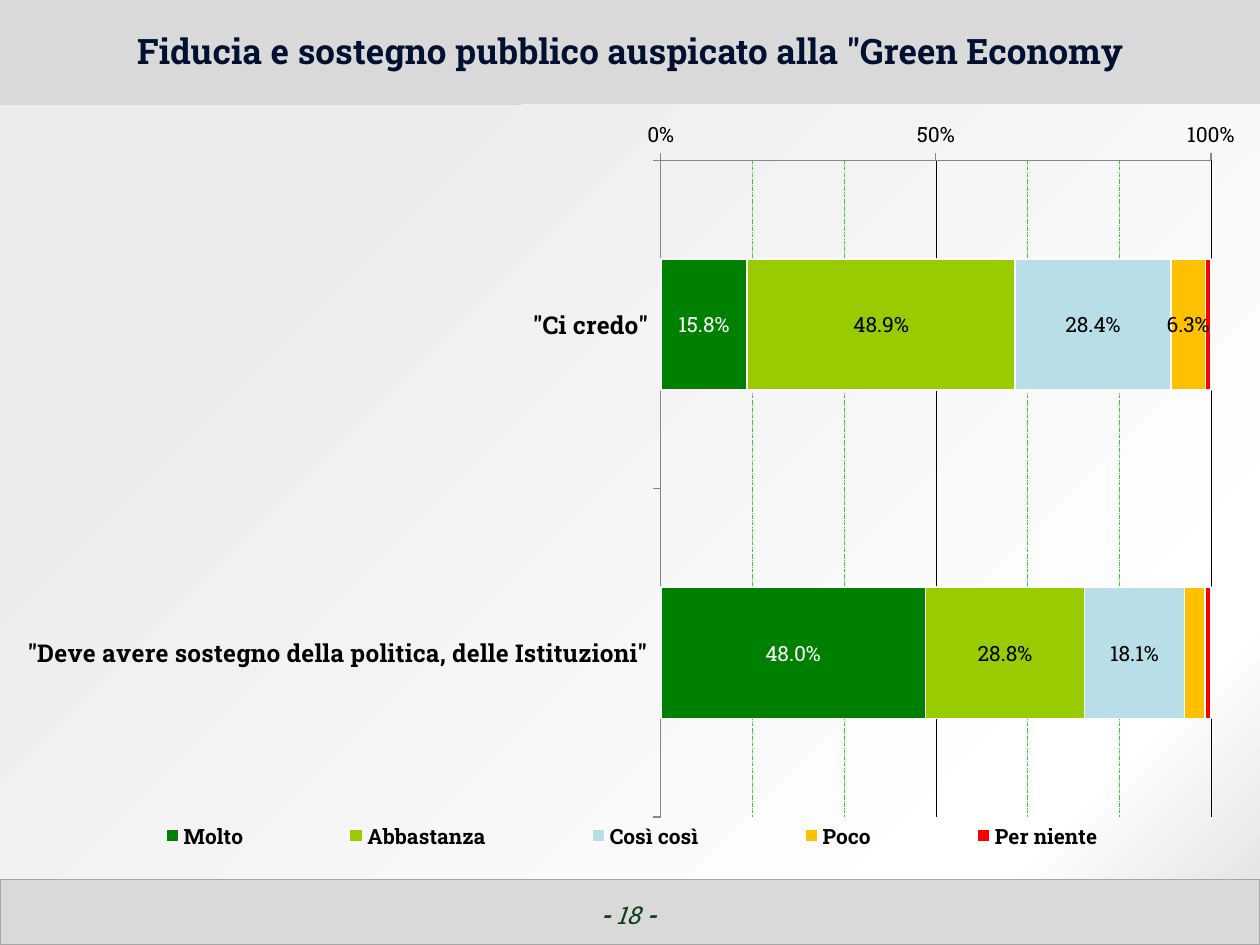
from lxml import etree
from pptx import Presentation
from pptx.chart.data import CategoryChartData
from pptx.dml.color import RGBColor
from pptx.enum.chart import XL_CHART_TYPE as ChartType, XL_LEGEND_POSITION as LegendPosition
from pptx.enum.chart import XL_TICK_MARK as TickMark
from pptx.enum.shapes import MSO_SHAPE as Preset
from pptx.enum.text import MSO_ANCHOR as Anchor, PP_ALIGN as Align
from pptx.oxml import parse_xml
from pptx.oxml.ns import nsdecls, qn
from pptx.util import Inches, Pt

FONT = "Roboto Slab"
BLACK = RGBColor(0x00, 0x00, 0x00)
WHITE = RGBColor(0xFF, 0xFF, 0xFF)
BAND = RGBColor(0xD9, 0xD9, 0xD9)
BAND_EDGE = RGBColor(0xA6, 0xA6, 0xA6)
AXIS = RGBColor(0x86, 0x86, 0x86)
MINOR_GRID = RGBColor(0x33, 0xCC, 0x33)
NAVY = RGBColor(0x00, 0x10, 0x30)
DARK_GREEN = RGBColor(0x0D, 0x41, 0x1A)

BACKDROP_STOPS = [(0, "E6E6E6"), (13, "FFFFFF"), (82, "ECECEC")]
STATEMENTS = ['"Ci credo"', '"Deve avere sostegno della politica, delle Istituzioni"']
# answer, share per statement, bar colour, label colour (None: no labels)
ANSWERS = [
    ("Molto", (0.158, 0.48), RGBColor(0x00, 0x80, 0x00), WHITE),
    ("Abbastanza", (0.489, 0.288), RGBColor(0x99, 0xCC, 0x00), BLACK),
    ("Così così", (0.284, 0.181), RGBColor(0xB8, 0xDE, 0xE8), BLACK),
    ("Poco", (0.063, 0.038), RGBColor(0xFF, 0xC0, 0x00), BLACK),
    ("Per niente", (0.01, 0.01), RGBColor(0xFF, 0x00, 0x00), None),
]
SMALLEST_LABEL = 0.05


def set_font(font, size, color, bold=False, italic=False):
    font.name, font.size = FONT, Pt(size)
    font.bold, font.italic = bold, italic
    font.color.rgb = color


def layout_xml(x, y, w, h, inner=False):
    """Return a manual chart layout, in fractions of the chart area."""
    target = '<c:layoutTarget val="inner"/>' if inner else ""
    return parse_xml(
        f'<c:layout {nsdecls("c")}><c:manualLayout>{target}'
        '<c:xMode val="edge"/><c:yMode val="edge"/>'
        f'<c:x val="{x}"/><c:y val="{y}"/><c:w val="{w}"/><c:h val="{h}"/>'
        "</c:manualLayout></c:layout>")


class SurveySlide:
    def __init__(self, slide):
        self.shapes = slide.shapes

    def band(self, left, top, width, height, edge=None):
        band = self.shapes.add_shape(
            Preset.RECTANGLE, Inches(left), Inches(top), Inches(width), Inches(height))
        band.shadow.inherit = False
        band.fill.solid()
        band.fill.fore_color.rgb = BAND
        if edge is None:
            band.line.fill.background()
        else:
            band.line.color.rgb = edge
            band.line.width = Pt(0.75)
        return band

    def backdrop(self, left, top, width, height):
        """Add a band with a gradient spreading from its lower right corner."""
        backdrop = self.band(left, top, width, height)
        stops = "".join(f'<a:gs pos="{pos * 1000}"><a:srgbClr val="{color}"/></a:gs>'
                        for pos, color in BACKDROP_STOPS)
        gradient = parse_xml(
            f'<a:gradFill {nsdecls("a")} rotWithShape="1"><a:gsLst>{stops}</a:gsLst>'
            '<a:path path="circle"><a:fillToRect l="100000" t="100000"/></a:path>'
            "</a:gradFill>")
        properties = backdrop.element.spPr
        properties.replace(properties.find(qn("a:solidFill")), gradient)

    def text(self, left, top, width, height, anchor):
        """Add a text box and return its centred paragraph."""
        frame = self.shapes.add_textbox(
            Inches(left), Inches(top), Inches(width), Inches(height)).text_frame
        frame.word_wrap = True
        frame.vertical_anchor = anchor
        paragraph = frame.paragraphs[0]
        paragraph.alignment = Align.CENTER
        return paragraph

    def title(self, wording):
        paragraph = self.text(0.16, 0.03, 9.69, 0.79, Anchor.MIDDLE)
        paragraph.text = wording
        paragraph.line_spacing = Pt(20)
        set_font(paragraph.font, 20, NAVY, bold=True)

    def page_number(self, number):
        paragraph = self.text(3.82, 7.09, 2.33, 0.52, Anchor.TOP)
        for part, bold in (("- ", True), (f"{number} ", False), ("-", True)):
            run = paragraph.add_run()
            run.text = part
            set_font(run.font, 14, DARK_GREEN, bold, italic=True)

    def answers_chart(self, left, top, width, height):
        data = CategoryChartData(number_format="0.0%")
        data.categories = STATEMENTS
        for answer, shares, *_ in ANSWERS:
            data.add_series(answer, shares)
        chart = self.shapes.add_chart(
            ChartType.BAR_STACKED_100, Inches(left), Inches(top),
            Inches(width), Inches(height), data).chart
        set_font(chart.font, 14, BLACK)
        chart.has_title = False
        plot = chart.plots[0]
        plot.gap_width, plot.overlap, plot.vary_by_categories = 150, 100, False
        for series, answer in zip(plot.series, ANSWERS):
            self.style_series(series, *answer[1:])
        self.style_axes(chart.category_axis, chart.value_axis)

        chart.has_legend = True
        legend = chart.legend
        legend.position = LegendPosition.BOTTOM
        legend.include_in_layout = False
        set_font(legend.font, 12, BLACK, bold=True)
        legend_element = chart.element.find(".//" + qn("c:legend"))
        plot_area = chart.element.find(".//" + qn("c:plotArea"))
        for part in (legend_element, plot_area):
            for automatic in part.findall(qn("c:layout")):
                part.remove(automatic)
        legend_element.find(qn("c:legendPos")).addnext(layout_xml(0.05, 0.92, 0.9, 0.05))
        plot_area.insert(0, layout_xml(0.523, 0.072, 0.438, 0.849, inner=True))

    def style_series(self, series, shares, color, label_color):
        series.format.fill.solid()
        series.format.fill.fore_color.rgb = color
        series.format.line.color.rgb = WHITE
        series.format.line.width = Pt(1)
        if label_color is None:
            return
        labels = series.data_labels
        labels.show_value = True
        labels.number_format, labels.number_format_is_linked = "0.0%", False
        set_font(labels.font, 12, label_color)
        for index, share in enumerate(shares):
            if share < SMALLEST_LABEL:
                hidden = etree.Element(qn("c:dLbl"))
                etree.SubElement(hidden, qn("c:idx")).set("val", str(index))
                etree.SubElement(hidden, qn("c:delete")).set("val", "1")
                labels._element.insert(0, hidden)

    def style_axes(self, statements, percent):
        for axis, size, bold in ((statements, 14, True), (percent, 12, False)):
            axis.major_tick_mark, axis.minor_tick_mark = TickMark.OUTSIDE, TickMark.NONE
            axis.format.line.color.rgb = AXIS
            axis.format.line.width = Pt(0.75)
            set_font(axis.tick_labels.font, size, BLACK, bold)
        statements.reverse_order = True
        percent.minimum_scale, percent.maximum_scale = 0, 1
        percent.major_unit, percent.minor_unit = 0.5, 0.5 / 3
        percent.tick_labels.number_format = "0%"
        percent.tick_labels.number_format_is_linked = False
        percent.has_major_gridlines = percent.has_minor_gridlines = True
        major_line = percent.major_gridlines.format.line
        major_line.color.rgb = BLACK
        major_line.width = Pt(0.25)
        minor_grid = percent._element.find(qn("c:minorGridlines"))
        minor_grid.append(parse_xml(
            f'<c:spPr {nsdecls("c", "a")}><a:ln w="{Pt(0.25)}"><a:solidFill>'
            f'<a:srgbClr val="{MINOR_GRID}"/></a:solidFill>'
            '<a:prstDash val="lgDashDot"/></a:ln></c:spPr>'))


def main():
    deck = Presentation()
    deck.slide_width, deck.slide_height = Inches(10), Inches(7.5)
    survey = SurveySlide(deck.slides.add_slide(deck.slide_layouts[6]))
    survey.band(0, 0, 10, 0.84)
    survey.band(0, 6.98, 10, 0.52, edge=BAND_EDGE)
    survey.backdrop(0, 0.83, 10, 6.14)
    survey.page_number(18)
    survey.title('Fiducia e sostegno pubblico auspicato alla "Green Economy')
    survey.answers_chart(0.03, 0.83, 9.97, 6.14)
    deck.save("out.pptx")


if __name__ == "__main__":
    main()
